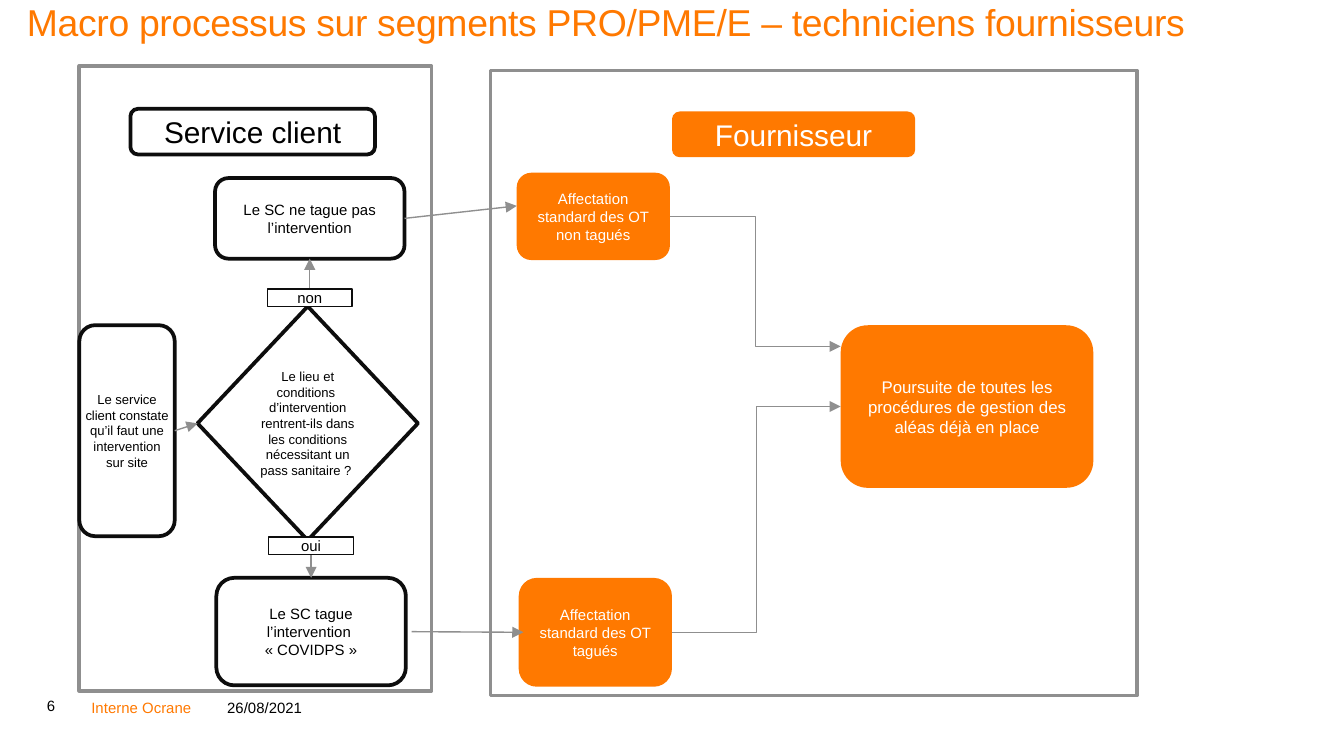
from dataclasses import dataclass

import pptx
import pptx.dml.color
import pptx.enum.shapes
import pptx.enum.text
import pptx.oxml
import pptx.oxml.ns
import pptx.util

SHAPE = pptx.enum.shapes.MSO_SHAPE
CONNECTOR = pptx.enum.shapes.MSO_CONNECTOR
ANCHOR = pptx.enum.text.MSO_ANCHOR
ALIGN = pptx.enum.text.PP_ALIGN

SLIDE_WIDTH = pptx.util.Inches(10)
SLIDE_HEIGHT = SLIDE_WIDTH * 9 // 16
CELL = SLIDE_WIDTH / 100  # one column or row of the square slide grid


@dataclass(frozen=True)
class Theme:
    font: str = "Arial"
    orange: str = "FF7900"
    white: str = "FFFFFF"
    black: str = "000000"
    outline: str = "0D0D0D"
    grey: str = "8F8F8F"
    title: float = 20
    heading: float = 16
    large: float = 9
    body: float = 8
    small: float = 7
    thick: float = 2
    thin: float = 0.75


THEME = Theme()
CLIENT_STYLE = dict(fill=THEME.white, line=THEME.outline, color=THEME.black)
SUPPLIER_STYLE = dict(fill=THEME.orange, color=THEME.white)


@dataclass(frozen=True)
class Box:
    """A rectangle measured in grid columns and rows."""
    left: float
    top: float
    width: float
    height: float

    def inner(self, column, row, width, height):
        return Box(self.left + column, self.top + row, width, height)

    def point(self, across, down):
        """A point at shares of the box's width and height."""
        return self.left + across * self.width, self.top + down * self.height

    def lengths(self):
        return [round(value * CELL) for value in
                (self.left, self.top, self.width, self.height)]


def rgb(value):
    return pptx.dml.color.RGBColor.from_string(value)


def set_attributes(target, values):
    for name, value in values.items():
        setattr(target, name, value)


def write_text(shape, text, size, color, align=ALIGN.CENTER, anchor=ANCHOR.MIDDLE,
               inset=True, wrap=True):
    frame = shape.text_frame
    horizontal, vertical = (CELL, CELL / 2) if inset else (0, 0)
    set_attributes(frame, dict(
        text=text, word_wrap=wrap, vertical_anchor=anchor,
        margin_left=round(horizontal), margin_right=round(horizontal),
        margin_top=round(vertical), margin_bottom=round(vertical)))
    for paragraph in frame.paragraphs:
        paragraph.alignment = align
        for run in paragraph.runs:
            set_attributes(run.font, dict(name=THEME.font, size=pptx.util.Pt(size)))
            run.font.color.rgb = rgb(color)


def add_node(slide, box, text="", size=THEME.body, kind=SHAPE.ROUNDED_RECTANGLE,
             fill=None, line=None, color=THEME.black, weight=THEME.thick, **layout):
    shape = slide.shapes.add_shape(kind, *box.lengths())
    shape.shadow.inherit = False
    if fill:
        shape.fill.solid()
        shape.fill.fore_color.rgb = rgb(fill)
    else:
        shape.fill.background()
    if line:
        shape.line.color.rgb = rgb(line)
        shape.line.width = pptx.util.Pt(weight)
    else:
        shape.line.fill.background()
    if text:
        write_text(shape, text, size, color, **layout)
    return box


def add_arrow(slide, start, end, kind=CONNECTOR.STRAIGHT):
    ends = [round(value * CELL) for value in (*start, *end)]
    connector = slide.shapes.add_connector(kind, *ends)
    connector.line.color.rgb = rgb(THEME.grey)
    connector.line.width = pptx.util.Pt(THEME.thin)
    head = pptx.oxml.parse_xml(
        f'<a:tailEnd {pptx.oxml.ns.nsdecls("a")} type="triangle"/>')
    connector.line._get_or_add_ln().append(head)
    connector._element.spPr.append(pptx.oxml.parse_xml(
        f'<a:effectLst {pptx.oxml.ns.nsdecls("a")}/>'))


def add_title(slide, box, text):
    title = slide.shapes.title
    set_attributes(title, dict(zip(("left", "top", "width", "height"), box.lengths())))
    write_text(title, text, THEME.title, THEME.orange, ALIGN.LEFT, ANCHOR.TOP, inset=False)
    paragraph = title.text_frame.paragraphs[0]
    paragraph.line_spacing = 0.9
    paragraph.runs[0].font._element.set("spc", "-20")


def add_footer(slide, box):
    entries = [
        ("6", box.inner(0.1, 0, 3, 3.6), THEME.black, ANCHOR.BOTTOM, True),
        ("Interne Ocrane", box.inner(3.4, 2.4, 8.1, 1.3), THEME.orange, ANCHOR.TOP, False),
        ("26/08/2021", box.inner(13.5, 2.4, 5.9, 1.3), THEME.black, ANCHOR.TOP, False),
    ]
    for text, place, color, anchor, wrap in entries:
        shape = slide.shapes.add_textbox(*place.lengths())
        write_text(shape, text, THEME.body, color, ALIGN.LEFT, anchor, inset=False, wrap=wrap)


def add_client_panel(slide, box):
    """Draw the customer service flow and return its two outcomes."""
    add_node(slide, box, kind=SHAPE.RECTANGLE, line=THEME.grey)
    add_node(slide, box.inner(3.8, 3.2, 18.2, 3.4), "Service client",
             THEME.heading, **CLIENT_STYLE)
    request = add_node(
        slide, box.inner(0, 19.3, 7.1, 15.7),
        "Le service client constate qu’il faut une intervention sur site",
        THEME.small, inset=False, **CLIENT_STYLE)
    decision = add_node(
        slide, box.inner(8.8, 17.9, 16.4, 17.4),
        "Le lieu et conditions \nd’intervention rentrent-ils dans les conditions "
        "nécessitant un pass sanitaire ? ",
        THEME.small, SHAPE.DIAMOND, inset=False, **CLIENT_STYLE)
    untagged = add_node(slide, box.inner(10.1, 8.35, 14.1, 6),
                        "Le SC ne tague pas l’intervention", **CLIENT_STYLE)
    tagged = add_node(slide, box.inner(10.2, 38.1, 14.1, 8),
                      "Le SC tague l’intervention \n« COVIDPS »", **CLIENT_STYLE)
    add_arrow(slide, request.point(1, 0.5), decision.point(0, 0.5))
    answers = [("non", box.inner(14, 16.6, 6.3, 1.3), 0, untagged.point(0.5, 1)),
               ("oui", box.inner(14.1, 35.05, 6.3, 1.3), 1, tagged.point(0.5, 0))]
    for text, place, edge, target in answers:
        add_arrow(slide, place.point(0.5, edge), target)
        add_node(slide, place, text, kind=SHAPE.RECTANGLE, weight=THEME.thin,
                 anchor=ANCHOR.TOP, inset=False, **CLIENT_STYLE)
    return untagged, tagged


def add_supplier_panel(slide, box):
    """Draw the supplier flow and return its two entry steps."""
    add_node(slide, box, kind=SHAPE.RECTANGLE, line=THEME.grey)
    add_node(slide, box.inner(13.5, 3.05, 18.1, 3.4), "Fournisseur",
             THEME.heading, **SUPPLIER_STYLE)
    untagged = add_node(slide, box.inner(1.95, 7.6, 11.4, 6.5),
                        "Affectation standard des OT non tagués", **SUPPLIER_STYLE)
    tagged = add_node(slide, box.inner(2.1, 37.75, 11.4, 8.1),
                      "Affectation standard des OT tagués", **SUPPLIER_STYLE)
    follow_up = add_node(
        slide, box.inner(26.05, 18.95, 18.8, 12.1),
        "Poursuite de toutes les procédures de gestion des aléas déjà en place",
        THEME.large, **SUPPLIER_STYLE)
    for step, height in ((untagged, 0.13), (tagged, 0.5)):
        add_arrow(slide, step.point(1, 0.5), follow_up.point(0, height), CONNECTOR.ELBOW)
    return untagged, tagged


def main():
    presentation = pptx.Presentation()
    set_attributes(presentation, dict(slide_width=SLIDE_WIDTH, slide_height=SLIDE_HEIGHT))
    slide = presentation.slides.add_slide(presentation.slide_layouts.get_by_name("Title Only"))
    add_title(slide, Box(2, 0.3, 98, 5.1),
              "Macro processus sur segments PRO/PME/E – techniciens fournisseurs")
    add_footer(slide, Box(3.4, 49.6, 20, 3.7))
    client_untagged, client_tagged = add_client_panel(slide, Box(5.9, 4.9, 26.2, 46.5))
    supplier_untagged, supplier_tagged = add_supplier_panel(slide, Box(36.5, 5.25, 48.1, 46.5))
    add_arrow(slide, client_untagged.point(1, 0.5), supplier_untagged.point(0, 0.38))
    add_arrow(slide, client_tagged.point(1.03, 0.5), supplier_tagged.point(0.03, 0.5))
    presentation.save("out.pptx")


if __name__ == "__main__":
    main()
